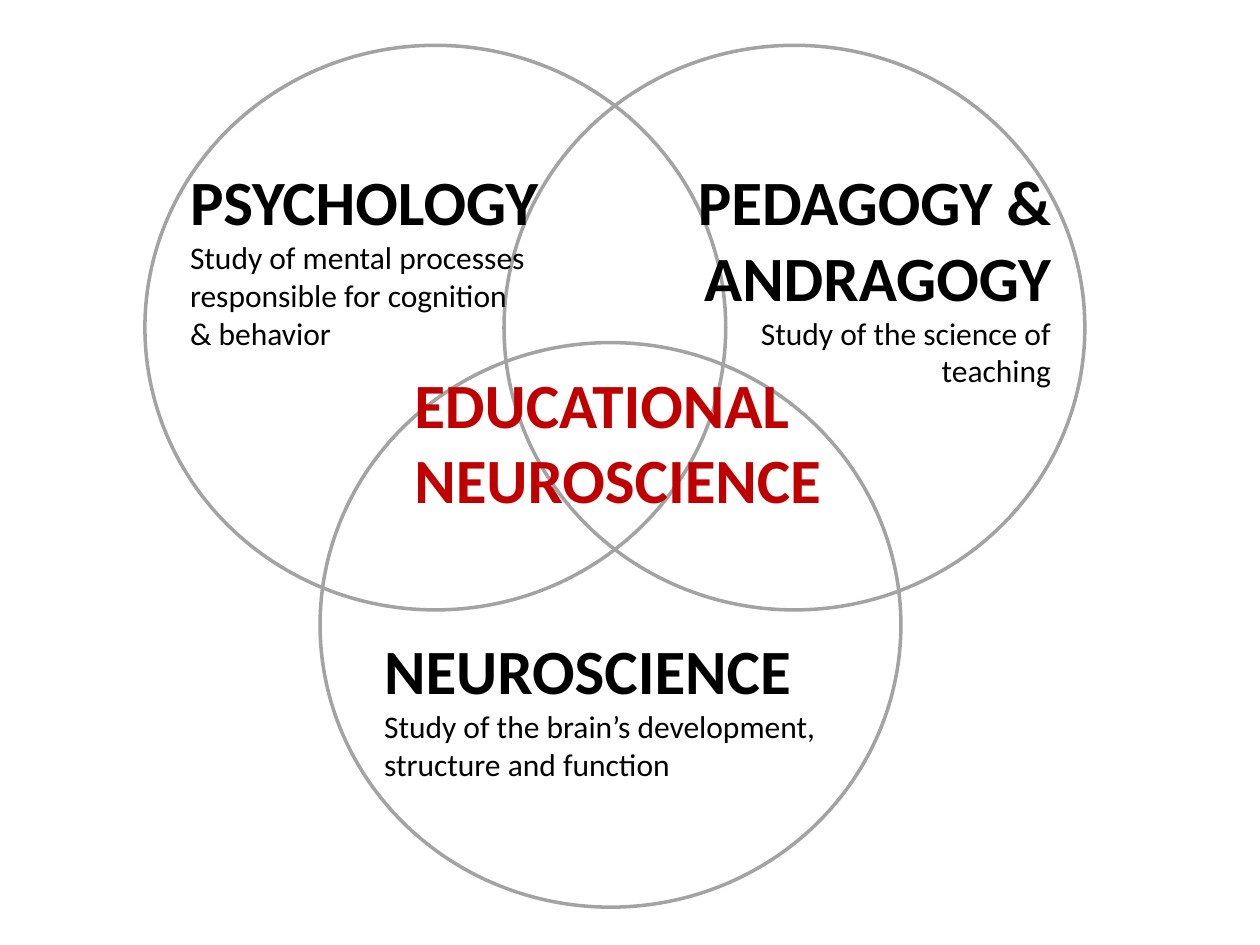
from dataclasses import dataclass

from pptx import Presentation
from pptx.dml.color import RGBColor
from pptx.enum.shapes import MSO_SHAPE
from pptx.enum.text import MSO_AUTO_SIZE, PP_ALIGN
from pptx.util import Pt

OVAL = MSO_SHAPE.OVAL
GROW = MSO_AUTO_SIZE.SHAPE_TO_FIT_TEXT
LEFT, RIGHT = PP_ALIGN.LEFT, PP_ALIGN.RIGHT

COLORS = {"ring": "A3A3A3", "field": "000000", "overlap": "C00000"}
HEADING = {"name": "Calibri", "size": Pt(36), "bold": True}
DETAIL = {"name": "Calibri", "size": Pt(18), "bold": False}
RING_WIDTH, RING_HEIGHT = 331.9, 322.6
BLANK_LAYOUT = 6


@dataclass
class Ring:
    left: float
    top: float


@dataclass
class Label:
    left: float
    top: float
    width: float
    height: float
    heading: str
    details: tuple[str, ...] = ()
    color: str = "field"
    align: PP_ALIGN = LEFT


RINGS = [Ring(82.8, 25.9), Ring(288, 25.9), Ring(182.9, 195.8)]

LABELS = [
    Label(101.5, 89.3, 216.7, 116.6, "PSYCHOLOGY",
          ("Study of mental processes responsible for cognition", "& behavior")),
    Label(365.8, 89.3, 241.9, 138.2, "PEDAGOGY & ANDRAGOGY",
          ("Study of the science of teaching",), align=RIGHT),
    Label(212.4, 357.1, 288.7, 94.3, "NEUROSCIENCE",
          ("Study of the brain’s development, structure and function",)),
    Label(229.7, 205.2, 254.9, 94.3, "EDUCATIONAL NEUROSCIENCE", color="overlap"),
]


def draw_ring(shapes, ring: Ring) -> None:
    circle = shapes.add_shape(OVAL, Pt(ring.left), Pt(ring.top),
                              Pt(RING_WIDTH), Pt(RING_HEIGHT))
    circle.shadow.inherit = False
    circle.fill.background()
    circle.line.color.rgb = RGBColor.from_string(COLORS["ring"])
    circle.line.width = Pt(2)


def draw_label(shapes, label: Label) -> None:
    box = shapes.add_textbox(Pt(label.left), Pt(label.top),
                             Pt(label.width), Pt(label.height))
    frame = box.text_frame
    frame.word_wrap = True
    frame.auto_size = GROW
    frame.text = "\n".join((label.heading, *label.details))
    for index, paragraph in enumerate(frame.paragraphs):
        paragraph.alignment = label.align
        font = paragraph.runs[0].font
        for attribute, value in (DETAIL if index else HEADING).items():
            setattr(font, attribute, value)
        font.color.rgb = RGBColor.from_string(COLORS[label.color])


def main() -> None:
    deck = Presentation()
    deck.slide_width, deck.slide_height = Pt(720), Pt(540)
    slide = deck.slides.add_slide(deck.slide_layouts[BLANK_LAYOUT])
    venn = slide.shapes.add_group_shape()
    for ring in RINGS:
        draw_ring(venn.shapes, ring)
    for label in LABELS:
        draw_label(slide.shapes, label)
    deck.save("out.pptx")


if __name__ == "__main__":
    main()
